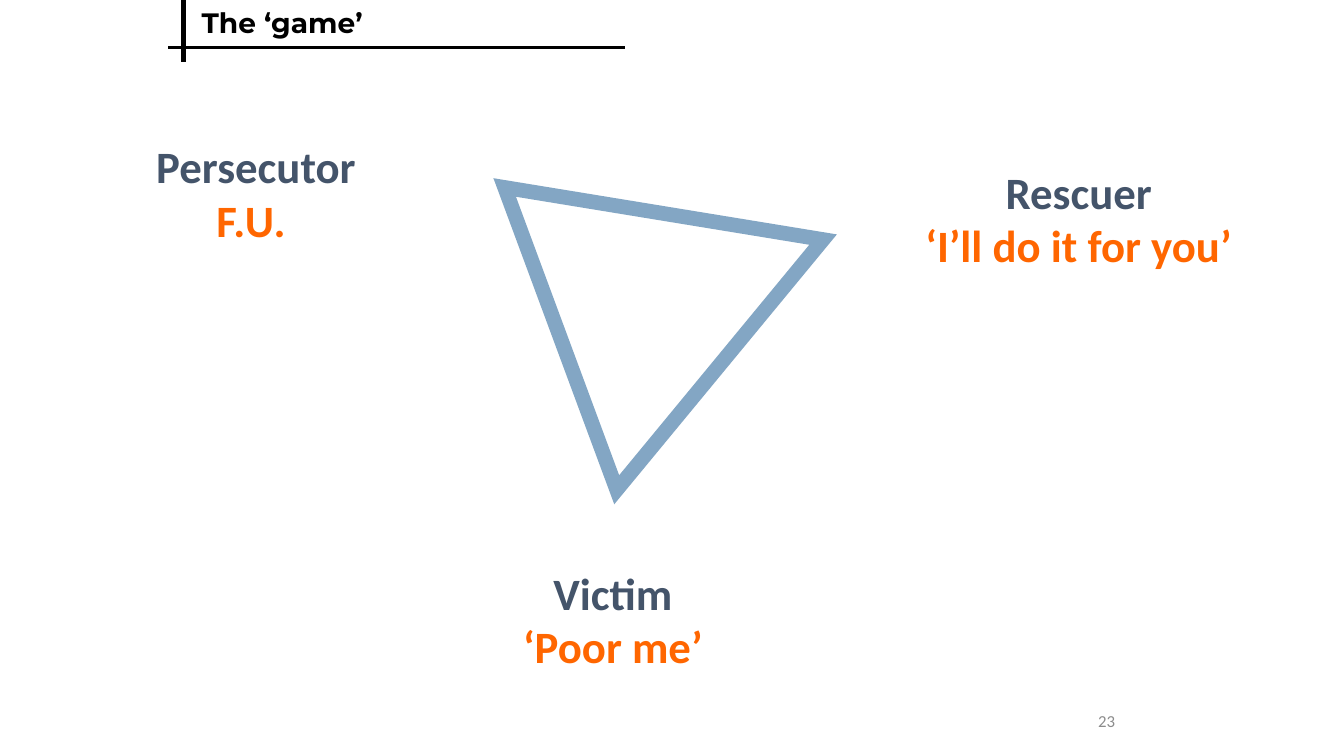
from lxml.etree import SubElement
from pptx import Presentation
from pptx.dml.color import RGBColor
from pptx.enum.shapes import MSO_CONNECTOR, MSO_SHAPE
from pptx.enum.text import MSO_ANCHOR, MSO_AUTO_SIZE, PP_ALIGN
from pptx.oxml.ns import qn
from pptx.util import Inches, Pt

BLACK, WHITE, GREY = "000000", "FFFFFF", "8C8C8C"
SLATE, ORANGE, BLUE = "44546A", "FF6600", "83A6C4"


def color(value):
    return RGBColor.from_string(value)


def place(shape, left, top, width, height):
    shape.left, shape.top = Inches(left), Inches(top)
    shape.width, shape.height = Inches(width), Inches(height)


def write(shape, lines, font="Calibri", size=32, bold=True,
          align=PP_ALIGN.CENTER, anchor=MSO_ANCHOR.TOP):
    """Fill a shape with (text, colour) lines, one paragraph each."""
    frame = shape.text_frame
    frame.word_wrap = True
    frame.auto_size = MSO_AUTO_SIZE.NONE
    frame.vertical_anchor = anchor
    for index, (text, tint) in enumerate(lines):
        para = frame.add_paragraph() if index else frame.paragraphs[0]
        para.alignment = align
        run = para.add_run()
        run.text = text
        run.font.name, run.font.size, run.font.bold = font, Pt(size), bold
        run.font.color.rgb = color(tint)


def add_box(slide, box, lines, **format):
    shape = slide.shapes.add_textbox(*map(Inches, box))
    write(shape, lines, **format)


def add_rule(slide, start, end, weight):
    rule = slide.shapes.add_connector(
        MSO_CONNECTOR.STRAIGHT, *map(Inches, start + end))
    rule.line.color.rgb = color(BLACK)
    rule.line.width = Pt(weight)
    SubElement(rule._element.spPr, qn("a:effectLst"))


def add_header(slide, left, top, text):
    """Place the title in the corner of two crossing rules."""
    title = slide.shapes.title
    place(title, left + 0.23, top, 5, 0.44)
    write(title, [(text, BLACK)], font="Montserrat", size=20,
          align=PP_ALIGN.LEFT)
    add_rule(slide, (left, top + 0.47), (left + 4.53, top + 0.47), 2.25)
    add_rule(slide, (left + 0.15, top), (left + 0.15, top + 0.62), 3)


def add_drama(slide, box):
    """Draw the tilted triangle with sharp corners."""
    shape = slide.shapes.add_shape(
        MSO_SHAPE.ISOSCELES_TRIANGLE, *map(Inches, box))
    shape.adjustments[0] = 0.506
    shape.rotation = 189.3
    shape.shadow.inherit = False
    shape.fill.solid()
    shape.fill.fore_color.rgb = color(WHITE)
    shape.line.color.rgb = color(BLUE)
    shape.line.width = Pt(10.5)
    SubElement(shape.line._get_or_add_ln(), qn("a:miter"), lim="800000")


def add_role(slide, left, top, width, role, phrase):
    add_box(slide, (left, top, width, 1.18),
            [(role, SLATE), (phrase, ORANGE)])


def main():
    deck = Presentation()
    deck.slide_width, deck.slide_height = Inches(13.33), Inches(7.5)
    slide = deck.slides.add_slide(deck.slide_layouts[5])
    add_drama(slide, (4.76, 2.1, 3.2, 2.78))
    add_role(slide, 0.99, 1.33, 3.1, "Persecutor", "F.U. ")
    add_role(slide, 8.63, 1.58, 4.14, "Rescuer", "‘I’ll do it for you’")
    add_role(slide, 2.76, 5.56, 6.64, "Victim", "‘Poor me’")
    add_header(slide, 1.67, 0, "The ‘game’")
    add_box(slide, (8.83, 6.95, 2.33, 0.4), [("23", GREY)], size=12,
            bold=False, align=PP_ALIGN.RIGHT, anchor=MSO_ANCHOR.MIDDLE)
    deck.save("out.pptx")


if __name__ == "__main__":
    main()
